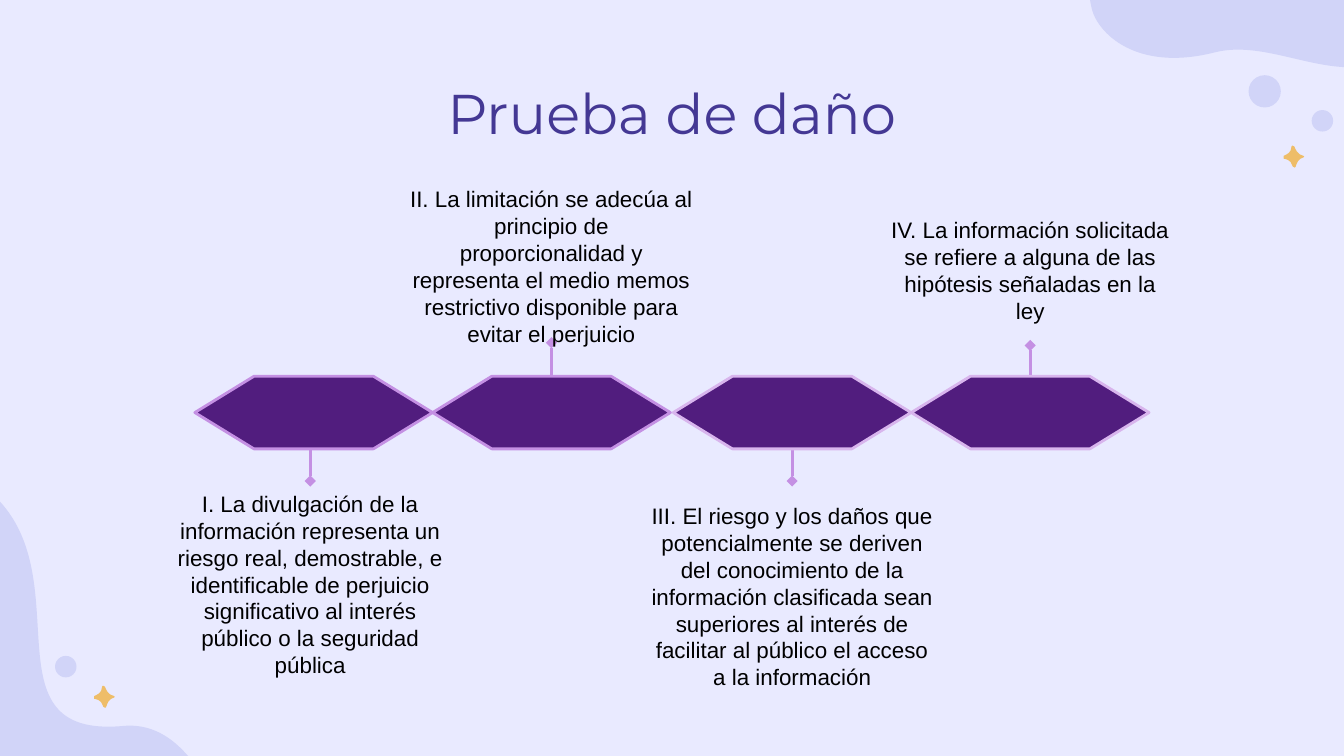
"""Build the "Prueba de daño" slide: four linked steps with captions above and below."""

from dataclasses import dataclass

from lxml.etree import SubElement
from pptx import Presentation
from pptx.dml.color import RGBColor
from pptx.enum.shapes import MSO_CONNECTOR as Connector, MSO_SHAPE as Shape
from pptx.enum.text import MSO_ANCHOR as Anchor, MSO_AUTO_SIZE as AutoSize, PP_ALIGN as Align
from pptx.oxml.ns import qn
from pptx.slide import Slide
from pptx.util import Pt

COLORS = {
    "background": "E9EAFF",
    "blob": "D1D4F8",
    "star": "EEBD69",
    "title": "443894",
    "step": "511D7E",
    "stem": "C490E3",
    "pale": "D8B5ED",
    "text": "000000",
}

STEP_TOP, CAPTION_WIDTH, STEM_LENGTH, LINE_WIDTH = 201.6, 167, 18.7, 1.5

Segment = tuple[float, ...]


@dataclass(frozen=True)
class Step:
    caption: str
    left: float
    top: float
    height: float
    hexagon_left: float
    stem_start: float
    above: bool
    border: str


@dataclass(frozen=True)
class Outline:
    frame: tuple[float, float, float, float]
    start: tuple[float, float]
    segments: tuple[Segment, ...]
    rotation: float = 0


STEPS = (
    Step("I. La divulgación de la información representa un riesgo real, demostrable, "
         "e identificable de perjuicio significativo al interés público o la seguridad "
         "pública", 82.7, 259, 108.7, 104.4, 239, False, "stem"),
    Step("II. La limitación se adecúa al principio de proporcionalidad y representa el "
         "medio memos restrictivo disponible para evitar el perjuicio",
         211.9, 95.8, 79.9, 231.8, 202.3, True, "stem"),
    Step("III. El riesgo y los daños que potencialmente se deriven del conocimiento de la "
         "información clasificada sean superiores al interés de facilitar al público el "
         "acceso a la información", 340.9, 265.5, 108.7, 360.7, 239, False, "pale"),
    Step("IV. La información solicitada se refiere a alguna de las hipótesis señaladas en "
         "la ley", 468.4, 112.3, 65.5, 488.2, 203.8, True, "pale"),
)

TOP_BLOB = Outline((580.3, -167, 194.4, 201.6), (770, -104), (
    (766, -79, 757, -73, 760, -55),
    (761, -42, 768, -32, 773, -18),
    (779, 0, 771, 34, 726, 36),
    (701, 37, 675, 22, 651, 28),
    (608, 39, 588, 17, 585, 5),
    (576, -32, 610, -37, 593, -65),
    (570, -105, 573, -169, 649, -148),
    (689, -137, 728, -183, 753, -161),
    (774, -146, 772, -122, 770, -104),
))
BOTTOM_BLOB = Outline((-307.4, 184.3, 551.5, 356.4), (210.8, 183.8), (
    (210.8, 183.8, -12.2, 188.8, -5.2, 264.8),
    (1.8, 340.8, -86.2, 285.8, -130.2, 335.8),
    (-174.2, 386.8, -53.2, 454.8, -130.2, 473.8),
    (-207.2, 491.8, -233.2, 465.8, -273.2, 501.8),
    (-313.2, 536.8, -306.2, 537.8, -306.2, 537.8),
    (244.8, 542.8),
    (234.8, 185.8),
    (210.8, 183.8),
), 90)
STAR = Outline((0, 0, 10.8, 11.5), (0, 5.8), (
    (1.4, 5, 4.3, 4.3, 4.3, 0.7),
    (4.3, 0, 5, 0, 5.8, 0.7),
    (6.5, 2.2, 7.2, 5, 10.8, 5.8),
    (10.8, 5.8, 11.5, 6.5, 10.8, 6.5),
    (7.9, 7.2, 7.2, 9.4, 6.5, 11.5),
    (6.5, 12.2, 5.8, 12.2, 5, 11.5),
    (4.3, 10, 4.3, 7.9, 0, 7.2),
    (0, 7.2, 0, 6.5, 0, 5.8),
))
HEXAGON = Outline((0, 0, 127.4, 38.9), (31.7, 0), (
    (0, 19.45), (31.7, 38.9), (95.7, 38.9), (127.4, 19.45), (95.7, 0),
))
STAR_CORNERS = ((687.6, 77.8), (50.4, 367.2))
DOTS = ((668.9, 40.3, 17.3), (702.7, 59, 11.5), (29.5, 351.4, 11.5))


def color(name: str) -> RGBColor:
    """Look up a named colour."""
    return RGBColor.from_string(COLORS[name])


def paint(shape, fill: str, border: str | None = None) -> None:
    """Give a shape a flat fill and an optional border."""
    shape.shadow.inherit = False
    shape.fill.solid()
    shape.fill.fore_color.rgb = color(fill)
    if border:
        shape.line.color.rgb = color(border)
        shape.line.width = Pt(LINE_WIDTH)
    else:
        shape.line.fill.background()


def draw_outline(page: Slide, outline: Outline, fill: str, left: float = 0,
                 top: float = 0, border: str | None = None) -> None:
    """Draw lines and cubic curves inside the outline's frame, moved by left and top."""
    x, y, width, height = outline.frame
    builder = page.shapes.build_freeform(Pt(left + x), Pt(top + y))
    builder.add_line_segments([(Pt(left + x + width), Pt(top + y + height))], close=False)
    shape = builder.convert_to_shape()
    shape.rotation = outline.rotation
    geometry = next(shape._element.iter(qn("a:path")))
    for child in list(geometry):
        geometry.remove(child)
    for index, segment in enumerate((outline.start, *outline.segments)):
        kind = "moveTo" if index == 0 else "lnTo" if len(segment) == 2 else "cubicBezTo"
        command = SubElement(geometry, qn(f"a:{kind}"))
        for across, down in zip(segment[::2], segment[1::2]):
            SubElement(command, qn("a:pt"), x=str(int(Pt(across - x))), y=str(int(Pt(down - y))))
    SubElement(geometry, qn("a:close"))
    paint(shape, fill, border)


def draw_decoration(page: Slide) -> None:
    """Draw the blobs, stars and dots in the corners."""
    for blob in (TOP_BLOB, BOTTOM_BLOB):
        draw_outline(page, blob, "blob")
    for left, top in STAR_CORNERS:
        draw_outline(page, STAR, "star", left, top)
    for left, top, size in DOTS:
        dot = page.shapes.add_shape(Shape.OVAL, Pt(left), Pt(top), Pt(size), Pt(size))
        paint(dot, "blob")


def style_paragraph(para, font: str, size: float, ink: str) -> None:
    """Centre a paragraph and set its font."""
    para.alignment = Align.CENTER
    para.font.name, para.font.size = font, Pt(size)
    para.font.color.rgb = color(ink)


def draw_title(page: Slide, text: str) -> None:
    """Place and format the title placeholder."""
    title = page.shapes.title
    title.left, title.top, title.width, title.height = Pt(56), Pt(34.9), Pt(607.7), Pt(43.2)
    frame = title.text_frame
    frame.text = text
    frame.auto_size, frame.vertical_anchor = AutoSize.NONE, Anchor.TOP
    frame.margin_left = frame.margin_right = frame.margin_top = frame.margin_bottom = Pt(7.2)
    style_paragraph(frame.paragraphs[0], "Montserrat", 30, "title")


def draw_step(page: Slide, step: Step) -> None:
    """Draw the stem and hexagon of one step."""
    center = Pt(step.left + CAPTION_WIDTH / 2)
    end = step.stem_start + (-STEM_LENGTH if step.above else STEM_LENGTH)
    stem = page.shapes.add_connector(
        Connector.STRAIGHT, center, Pt(step.stem_start), center, Pt(end))
    stem.line.color.rgb = color("stem")
    stem.line.width = Pt(LINE_WIDTH)
    SubElement(stem.line._get_or_add_ln(), qn("a:tailEnd"), type="diamond")
    SubElement(stem._element.spPr, qn("a:effectLst"))
    draw_outline(page, HEXAGON, "step", step.hexagon_left, STEP_TOP, step.border)


def draw_caption(page: Slide, step: Step) -> None:
    """Write the caption of one step."""
    box = page.shapes.add_textbox(
        Pt(step.left), Pt(step.top), Pt(CAPTION_WIDTH), Pt(step.height))
    frame = box.text_frame
    frame.word_wrap, frame.auto_size = True, AutoSize.SHAPE_TO_FIT_TEXT
    frame.text = step.caption
    style_paragraph(frame.paragraphs[0], "Arial", 12, "text")


def main() -> None:
    """Build and save the deck."""
    deck = Presentation()
    deck.slide_width, deck.slide_height = Pt(720), Pt(405)
    page = deck.slides.add_slide(deck.slide_layouts[5])
    page.background.fill.solid()
    page.background.fill.fore_color.rgb = color("background")
    draw_decoration(page)
    draw_title(page, "Prueba de daño")
    for draw in (draw_step, draw_caption):
        for step in STEPS:
            draw(page, step)
    deck.save("out.pptx")


if __name__ == "__main__":
    main()
